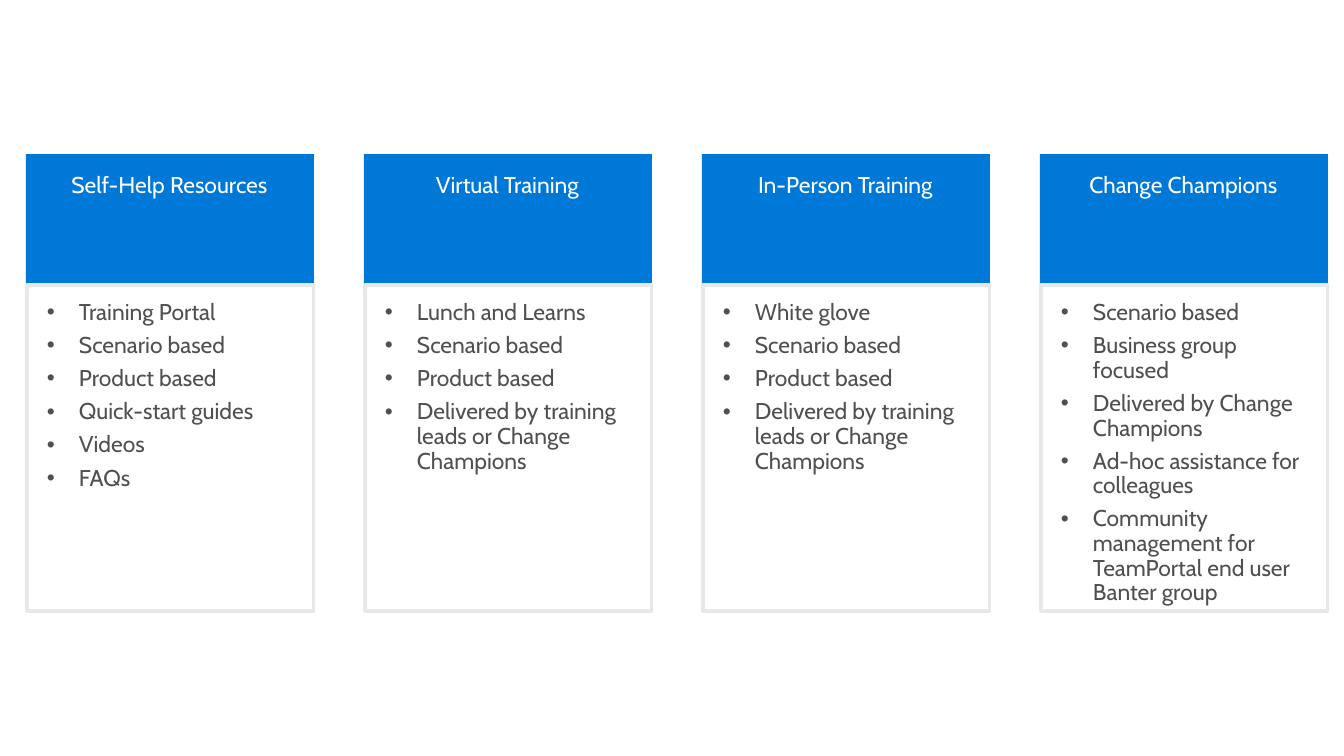
from lxml import etree
from pptx import Presentation
from pptx.dml.color import RGBColor
from pptx.enum.shapes import MSO_SHAPE
from pptx.enum.text import MSO_ANCHOR, MSO_AUTO_SIZE, PP_ALIGN
from pptx.oxml.ns import qn
from pptx.util import Pt

RECTANGLE = MSO_SHAPE.RECTANGLE
TOP = MSO_ANCHOR.TOP
GROW = MSO_AUTO_SIZE.SHAPE_TO_FIT_TEXT
FIXED = MSO_AUTO_SIZE.NONE
LEFT, CENTER = PP_ALIGN.LEFT, PP_ALIGN.CENTER

BLUE = RGBColor(0x00, 0x78, 0xD7)
WHITE = RGBColor(0xFF, 0xFF, 0xFF)
GRAY = RGBColor(0x50, 0x50, 0x50)
BORDER = RGBColor(0xE8, 0xE8, 0xE8)

FONT = "Cabin"
FONT_SIZE = Pt(16.3)
EMU_PER_PX = 914400 / 100.8

FIRST_LEFT = 26
COLUMN_PITCH = 338
BULLET_INDENT = 32

COLUMNS = [
    ("Self-Help Resources",
     ["Training Portal", "Scenario based", "Product based",
      "Quick-start guides", "Videos", "FAQs"]),
    ("Virtual Training",
     ["Lunch and Learns", "Scenario based", "Product based",
      "Delivered by training leads or Change Champions"]),
    ("In-Person Training",
     ["White glove", "Scenario based", "Product based",
      "Delivered by training leads or Change Champions"]),
    ("Change Champions",
     ["Scenario based", "Business group focused",
      "Delivered by Change Champions", "Ad-hoc assistance for colleagues",
      "Community management for TeamPortal end user Banter group"]),
]


def px(length):
    return round(length * EMU_PER_PX)


def add_rectangle(slide, left, top, width, height, fill=None, border=None):
    shape = slide.shapes.add_shape(
        RECTANGLE, px(left), px(top), px(width), px(height))
    shape.shadow.inherit = False
    if fill is None:
        shape.fill.background()
    else:
        shape.fill.solid()
        shape.fill.fore_color.rgb = fill
    if border is None:
        shape.line.fill.background()
    else:
        shape.line.color.rgb = border
        shape.line.width = Pt(2.25)
    return shape


def set_text(shape, lines, color, alignment, auto_size):
    frame = shape.text_frame
    frame.text = "\n".join(lines)
    frame.word_wrap = True
    frame.auto_size = auto_size
    frame.vertical_anchor = TOP
    frame.margin_left = frame.margin_right = px(20)
    frame.margin_top = frame.margin_bottom = px(16)
    for paragraph in frame.paragraphs:
        paragraph.alignment = alignment
        paragraph.line_spacing = 0.9
        paragraph.space_after = Pt(6)
        for run in paragraph.runs:
            run.font.name = FONT
            run.font.size = FONT_SIZE
            run.font.color.rgb = color


def add_bullet(paragraph):
    properties = paragraph._p.get_or_add_pPr()
    properties.set("marL", str(px(BULLET_INDENT)))
    properties.set("indent", str(-px(BULLET_INDENT)))
    etree.SubElement(properties, qn("a:buFont"), typeface="Arial")
    etree.SubElement(properties, qn("a:buChar"), char="•")


def add_header(slide, left, title):
    add_rectangle(slide, left, 154, 288, 131, fill=BLUE)
    label = add_rectangle(slide, left + 14, 161, 259, 58, fill=BLUE)
    set_text(label, [title], WHITE, CENTER, GROW)


def add_bullet_box(slide, left, items):
    box = add_rectangle(slide, left + 1, 285, 287, 326, border=BORDER)
    set_text(box, items, GRAY, LEFT, FIXED)
    for paragraph in box.text_frame.paragraphs:
        add_bullet(paragraph)


def main():
    presentation = Presentation()
    presentation.slide_width = px(1344)
    presentation.slide_height = px(756)
    blank_layout = presentation.slide_layouts[6]
    slide = presentation.slides.add_slide(blank_layout)
    for index, (title, items) in enumerate(COLUMNS):
        left = FIRST_LEFT + index * COLUMN_PITCH
        add_header(slide, left, title)
        add_bullet_box(slide, left, items)
    presentation.save("out.pptx")


if __name__ == "__main__":
    main()
